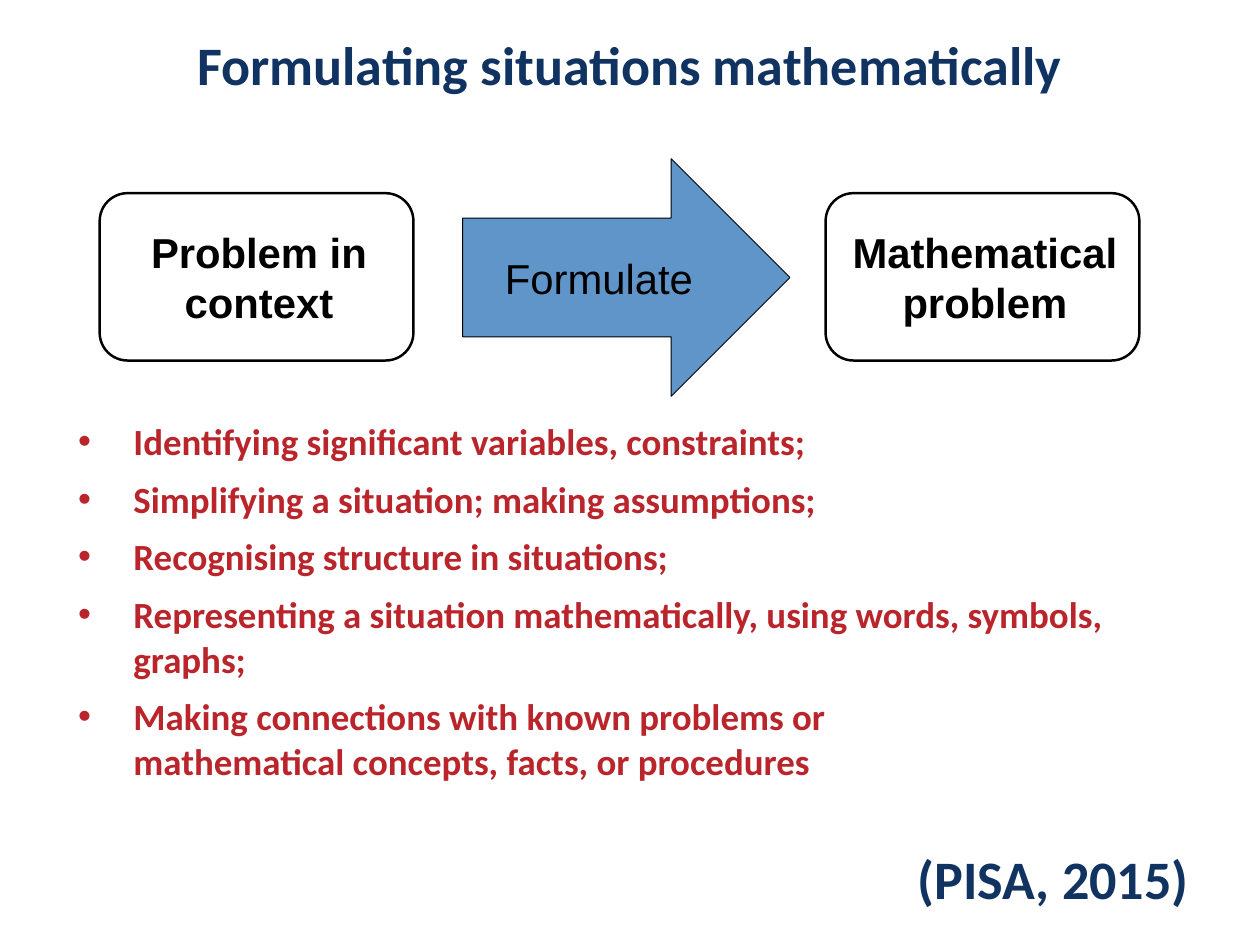
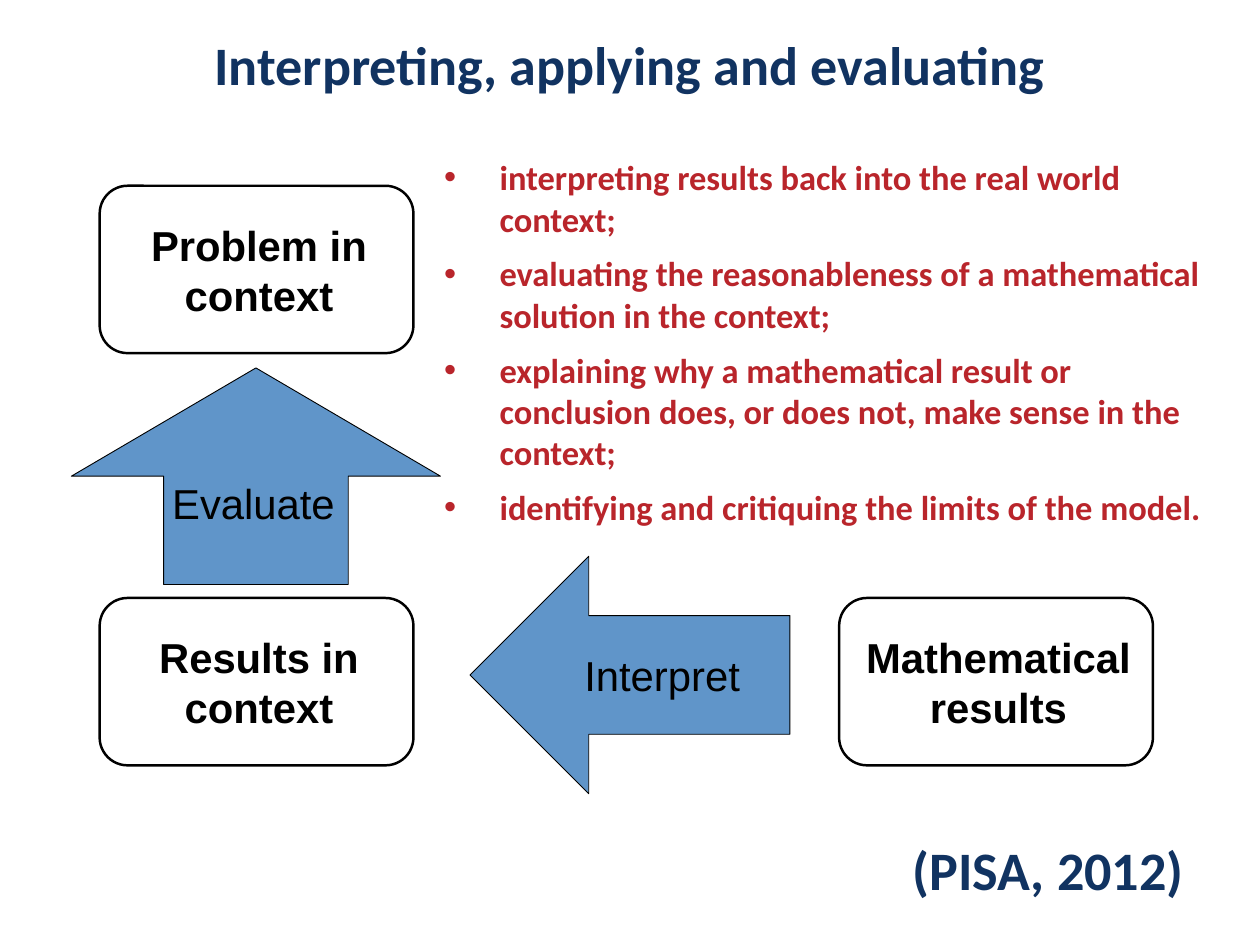
from dataclasses import dataclass

from lxml import etree
from pptx import Presentation
from pptx.dml.color import RGBColor
from pptx.enum.shapes import MSO_SHAPE
from pptx.enum.text import MSO_ANCHOR, PP_ALIGN
from pptx.oxml.ns import qn
from pptx.util import Pt

ROUNDED = MSO_SHAPE.ROUNDED_RECTANGLE
RIGHT_ARROW = MSO_SHAPE.RIGHT_ARROW
LEFT_ARROW = MSO_SHAPE.LEFT_ARROW
UP_ARROW = MSO_SHAPE.UP_ARROW
TOP, MIDDLE = MSO_ANCHOR.TOP, MSO_ANCHOR.MIDDLE
LEFT, CENTER = PP_ALIGN.LEFT, PP_ALIGN.CENTER


@dataclass(frozen=True)
class TextStyle:
    font: str
    size: float
    color: str
    bold: bool = True


@dataclass(frozen=True)
class Theme:
    navy: str = "113361"
    red: str = "B9252B"
    blue: str = "6095C9"
    black: str = "000000"
    white: str = "FFFFFF"
    heading_font: str = "Calibri"
    diagram_font: str = "Arial"
    heading_size: float = 44
    diagram_size: float = 34
    inset: float = 3
    diagram_left_inset: float = 7
    bullet_indent: float = 45
    bullet_gap: float = 11


THEME = Theme()
HEADING = TextStyle(THEME.heading_font, THEME.heading_size, THEME.navy)
STAGE_TEXT = TextStyle(THEME.diagram_font, THEME.diagram_size, THEME.black)
ARROW_TEXT = TextStyle(THEME.diagram_font, THEME.diagram_size, THEME.black, bold=False)


@dataclass(frozen=True)
class Area:
    left: float
    top: float
    width: float
    height: float

    def lengths(self):
        return Pt(self.left), Pt(self.top), Pt(self.width), Pt(self.height)


@dataclass(frozen=True)
class Stage:
    label: str
    left: float
    top: float


@dataclass(frozen=True)
class Arrow:
    label: str
    kind: MSO_SHAPE
    area: Area
    align: PP_ALIGN = CENTER


@dataclass(frozen=True)
class Page:
    title: str
    bullets: tuple[str, ...]
    bullet_area: Area
    bullet_size: float
    stages: tuple[Stage, ...]
    arrows: tuple[Arrow, ...]
    citation: str
    citation_area: Area


SLIDE_WIDTH, SLIDE_HEIGHT = 1024, 768
TITLE_AREA = Area(51, 0, 922, 103)
STAGE_WIDTH, STAGE_HEIGHT = 255, 136
STAGE_LEFT = 81
UPPER_ROW, LOWER_ROW = 151, 486

PAGES = (
    Page(
        title="Formulating situations mathematically",
        bullets=(
            "Identifying significant variables, constraints;",
            "Simplifying a situation; making assumptions;",
            "Recognising structure in situations;",
            "Representing a situation mathematically, using words, symbols, graphs;",
            "Making connections with known problems or \nmathematical concepts, facts, or procedures",
        ),
        bullet_area=Area(60.5, 337, 922, 355),
        bullet_size=30,
        stages=(
            Stage("Problem in context", STAGE_LEFT, 157),
            Stage("Mathematical problem", 671, 157),
        ),
        arrows=(Arrow("Formulate", RIGHT_ARROW, Area(376, 129, 266, 193)),),
        citation="(PISA, 2015)",
        citation_area=Area(741, 687, 230, 62),
    ),
    Page(
        title="Interpreting, applying and evaluating",
        bullets=(
            "interpreting results back into the real world context;",
            "evaluating the reasonableness of a mathematical solution in the context;",
            "explaining why a mathematical result or conclusion does, or does not, "
            "make sense in the context;",
            "identifying and critiquing the limits of the model.",
        ),
        bullet_area=Area(358, 124, 644, 521),
        bullet_size=28,
        stages=(
            Stage("Problem in context", STAGE_LEFT, UPPER_ROW),
            Stage("Mathematical results", 682, LOWER_ROW),
            Stage("Results in context", STAGE_LEFT, LOWER_ROW),
        ),
        arrows=(
            Arrow("Interpret", LEFT_ARROW, Area(382, 452, 260, 193)),
            Arrow("Evaluate", UP_ARROW, Area(58, 299, 300, 176), LEFT),
        ),
        citation="(PISA, 2012)",
        citation_area=Area(737, 680, 230, 62),
    ),
)


def format_paragraph(para, style: TextStyle, align: PP_ALIGN) -> None:
    para.alignment = align
    for span in para.runs:
        span.font.name = style.font
        span.font.size = Pt(style.size)
        span.font.bold = style.bold
        span.font.color.rgb = RGBColor.from_string(style.color)


def prepare_frame(frame, anchor: MSO_ANCHOR, inset: float, left_inset: float) -> None:
    frame.word_wrap = True
    frame.vertical_anchor = anchor
    frame.margin_left = Pt(left_inset)
    frame.margin_top = frame.margin_right = frame.margin_bottom = Pt(inset)


def add_heading(slide, text: str, area: Area, anchor: MSO_ANCHOR, inset: float) -> None:
    frame = slide.shapes.add_textbox(*area.lengths()).text_frame
    prepare_frame(frame, anchor, inset, inset)
    frame.text = text
    format_paragraph(frame.paragraphs[0], HEADING, CENTER)


def set_bullet(para, color: str) -> None:
    properties = para._p.get_or_add_pPr()
    properties.set("marL", str(Pt(THEME.bullet_indent)))
    properties.set("indent", str(-Pt(THEME.bullet_indent)))
    bullet_color = etree.SubElement(properties, qn("a:buClr"))
    etree.SubElement(bullet_color, qn("a:srgbClr"), val=color)
    etree.SubElement(properties, qn("a:buFont"), typeface=THEME.diagram_font)
    etree.SubElement(properties, qn("a:buChar"), char="•")


def add_bullets(slide, page: Page) -> None:
    style = TextStyle(THEME.heading_font, page.bullet_size, THEME.red)
    frame = slide.shapes.add_textbox(*page.bullet_area.lengths()).text_frame
    prepare_frame(frame, TOP, THEME.inset, THEME.inset)
    for index, text in enumerate(page.bullets):
        para = frame.add_paragraph() if index else frame.paragraphs[0]
        para.text = text.replace("\n", "\v")
        para.space_before = Pt(THEME.bullet_gap)
        format_paragraph(para, style, LEFT)
        set_bullet(para, style.color)


def add_labelled_shape(slide, kind: MSO_SHAPE, area: Area, label: str, fill: str,
                       line_width: float, style: TextStyle, align: PP_ALIGN = CENTER) -> None:
    shape = slide.shapes.add_shape(kind, *area.lengths())
    shape.shadow.inherit = False
    shape.fill.solid()
    shape.fill.fore_color.rgb = RGBColor.from_string(fill)
    shape.line.color.rgb = RGBColor.from_string(THEME.black)
    shape.line.width = Pt(line_width)
    prepare_frame(shape.text_frame, MIDDLE, THEME.inset, THEME.diagram_left_inset)
    shape.text_frame.text = label
    format_paragraph(shape.text_frame.paragraphs[0], style, align)


def add_page(deck, page: Page) -> None:
    slide = deck.slides.add_slide(deck.slide_layouts.get_by_name("Blank"))
    add_heading(slide, page.title, TITLE_AREA, MIDDLE, THEME.inset)
    add_bullets(slide, page)
    for stage in page.stages:
        area = Area(stage.left, stage.top, STAGE_WIDTH, STAGE_HEIGHT)
        add_labelled_shape(slide, ROUNDED, area, stage.label, THEME.white, 2, STAGE_TEXT)
    for arrow in page.arrows:
        add_labelled_shape(slide, arrow.kind, arrow.area, arrow.label, THEME.blue, 0.75,
                           ARROW_TEXT, arrow.align)
    add_heading(slide, page.citation, page.citation_area, TOP, 0)


def main() -> None:
    deck = Presentation()
    deck.slide_width, deck.slide_height = Pt(SLIDE_WIDTH), Pt(SLIDE_HEIGHT)
    for page in PAGES:
        add_page(deck, page)
    deck.save("out.pptx")


if __name__ == "__main__":
    main()
